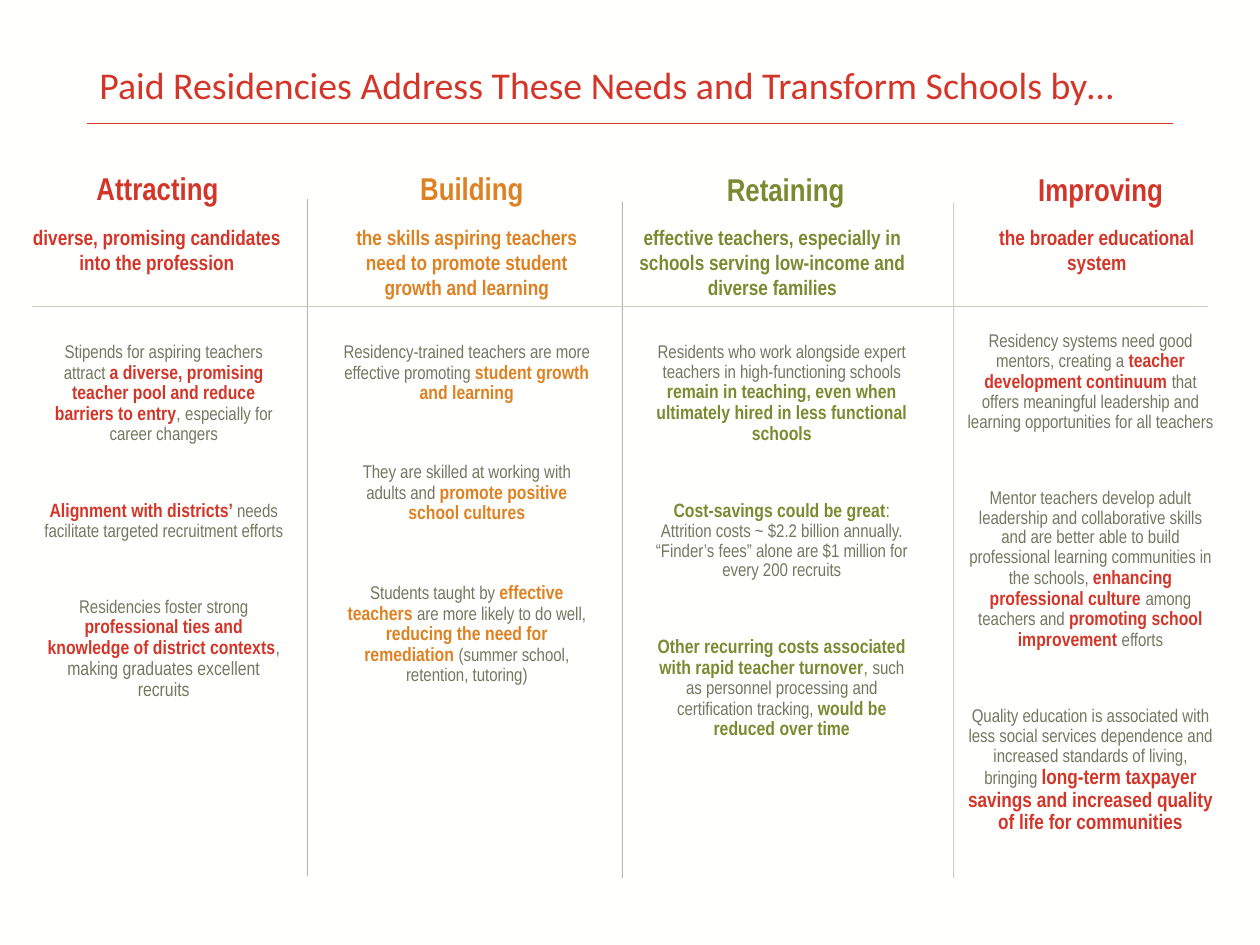
from lxml.etree import SubElement
from pptx import Presentation
from pptx.dml.color import RGBColor
from pptx.enum.shapes import MSO_CONNECTOR
from pptx.enum.text import MSO_ANCHOR as Anchor, PP_ALIGN as Align
from pptx.oxml.ns import qn
from pptx.util import Inches, Pt

COLORS = {"paper": "FFFFFE", "red": "D33529", "orange": "DE8122",
          "green": "7B8A31", "grey": "737761", "rule": "C8CABE"}
NARROW = "Arial Narrow"

# Run styles: size, bold, colour (None takes the colour of the column)
STYLES = {
    "plain": (10.5, False, "grey"),
    "large": (11, False, "grey"),
    "tint": (11, False, None),
    "key": (11, True, None),
    "strong": (12, True, None),
    "heading": (18, True, None),
}

TITLE = "Paid Residencies Address These Needs and Transform Schools by…"

# Boxes are left, top, width, height in inches; gap is points between points
COLUMNS = [
    {"color": "red", "gap": 32,
     "heading": ("Attracting", (0.5, 1.33, 1.5, 0.44)),
     "promise": ("diverse, promising candidates into the profession",
                 (0.12, 1.73, 2.25, 0.5)),
     "box": (0.25, 2.67, 2.1, 3.16),
     "points": [
         [("Stipends for aspiring teachers attract ", "plain"),
          ("a diverse, promising teacher pool and reduce barriers to entry", "key"),
          (", ", "large"), ("especially for career changers", "plain")],
         [("Alignment with districts’ ", "key"),
          ("needs facilitate targeted recruitment efforts", "plain")],
         [("Residencies foster strong ", "plain"),
          ("professional ties and knowledge of district contexts", "key"),
          (", making graduates excellent recruits", "large")],
     ]},
    {"color": "orange", "gap": 33.5,
     "heading": ("Building", (2.93, 1.33, 1.63, 0.44)),
     "promise": ("the skills aspiring teachers need to promote student growth and learning",
                 (2.58, 1.73, 2.25, 0.71)),
     "box": (2.61, 2.67, 2.19, 4),
     "points": [
         [("Residency-trained teachers are more effective promoting ", "plain"),
          ("student growth and learning", "key")],
         [("They are skilled at working with adults and ", "plain"),
          ("promote positive school cultures", "key")],
         [("Students taught by ", "plain"), ("effective teachers ", "key"),
          ("are more likely to do well, ", "plain"),
          ("reducing the need for remediation ", "key"),
          ("(summer school, retention, tutoring)", "plain")],
     ]},
    {"color": "green", "gap": 32,
     "heading": ("Retaining", (5.38, 1.33, 1.71, 0.39)),
     "promise": ("effective teachers, especially in schools serving low-income and diverse families",
                 (4.92, 1.73, 2.42, 0.89)),
     "box": (5.07, 2.67, 2.27, 4.2),
     "points": [
         [("Residents who work alongside expert teachers in high-functioning schools ", "plain"),
          ("remain in teaching, even when ultimately hired in less functional schools", "key")],
         [("Cost-savings could be great", "key"), (": ", "tint"),
          ("Attrition costs ~ $2.2 billion annually. “Finder’s fees” alone are "
           "$1 million for every 200 recruits", "plain")],
         [("Other recurring costs associated with rapid teacher turnover", "key"),
          (", ", "tint"),
          ("such as personnel processing and certification tracking, ", "plain"),
          ("would be reduced over time", "key")],
     ]},
    {"color": "red", "gap": 32,
     "heading": ("Improving", (7.88, 1.33, 1.71, 0.39)),
     "promise": ("the broader educational system", (7.58, 1.73, 2.25, 0.5)),
     "box": (7.57, 2.58, 2.17, 4.09),
     "points": [
         [("Residency systems need good mentors, creating a ", "plain"),
          ("teacher development continuum ", "key"),
          ("that offers meaningful leadership and learning opportunities for all teachers", "plain")],
         [("Mentor teachers develop adult leadership and collaborative skills and are better "
           "able to build professional learning communities in the schools, ", "plain"),
          ("enhancing professional culture ", "key"), ("among teachers and ", "plain"),
          ("promoting school improvement ", "key"), ("efforts", "plain")],
         [("Quality education is associated with less social services dependence and "
           "increased standards of living, bringing ", "plain"),
          ("long-term taxpayer savings and increased quality of life for communities", "strong")],
     ]},
]

# Start x, y, end x, y, colour, width in points, opacity in percent
LINES = [
    (0.69, 0.98, 9.31, 0.98, "red", 0.75, 100),
    (2.44, 1.58, 2.44, 6.95, "grey", 0.5, 50),
    (4.94, 1.6, 4.94, 6.97, "grey", 0.5, 50),
    (7.57, 1.61, 7.57, 6.97, "grey", 0.5, 50),
    (0.25, 2.43, 9.59, 2.43, "rule", 0.5, 100),
]


def rgb(name):
    return RGBColor.from_string(COLORS[name])


def add_span(para, text, color, **font_values):
    span = para.add_run()
    span.text = text
    span.font.color.rgb = rgb(color)
    for name, value in font_values.items():
        setattr(span.font, name, value)


def add_box(page, place, anchor=Anchor.TOP):
    frame = page.shapes.add_textbox(*map(Inches, place)).text_frame
    frame.word_wrap = True
    frame.vertical_anchor = anchor
    return frame


def add_points(page, place, points, color, gap=0, spacing=0.9):
    frame = add_box(page, place)
    for index, point in enumerate(points):
        para = frame.add_paragraph() if index else frame.paragraphs[0]
        layout = {"alignment": Align.CENTER, "line_spacing": spacing,
                  "space_before": Pt(gap if index else 0)}
        for name, value in layout.items():
            setattr(para, name, value)
        for text, style in point:
            size, bold, own_color = STYLES[style]
            add_span(para, text, own_color or color,
                     size=Pt(size), bold=bold, name=NARROW)


def add_line(page, x1, y1, x2, y2, color, width, opacity):
    line = page.shapes.add_connector(
        MSO_CONNECTOR.STRAIGHT, *map(Inches, (x1, y1, x2, y2)))
    line.line.color.rgb = rgb(color)
    line.line.width = Pt(width)
    properties = line._element.spPr
    if opacity < 100:
        fill = properties.find(".//" + qn("a:srgbClr"))
        SubElement(fill, qn("a:alpha"), val=str(opacity * 1000))
    SubElement(properties, qn("a:effectLst"))


def main():
    deck = Presentation()
    deck.slide_width, deck.slide_height = Inches(10), Inches(7.5)
    page = deck.slides.add_slide(deck.slide_layouts[6])
    page.background.fill.solid()
    page.background.fill.fore_color.rgb = rgb("paper")

    # Title
    para = add_box(page, (0.69, 0.4, 9.06, 0.58), Anchor.MIDDLE).paragraphs[0]
    para.line_spacing = 0.9
    add_span(para, TITLE, "red", size=Pt(21.6), name="Calibri")

    # Four columns: heading, promise and points
    for column in COLUMNS:
        color = column["color"]
        heading, heading_box = column["heading"]
        promise, promise_box = column["promise"]
        add_points(page, heading_box, [[(heading, "heading")]], color)
        add_points(page, promise_box, [[(promise, "strong")]], color, spacing=1)
        add_points(page, column["box"], column["points"], color, column["gap"])

    # Title rule, column dividers and heading rule
    for line in LINES:
        add_line(page, *line)

    deck.save("out.pptx")


if __name__ == "__main__":
    main()
